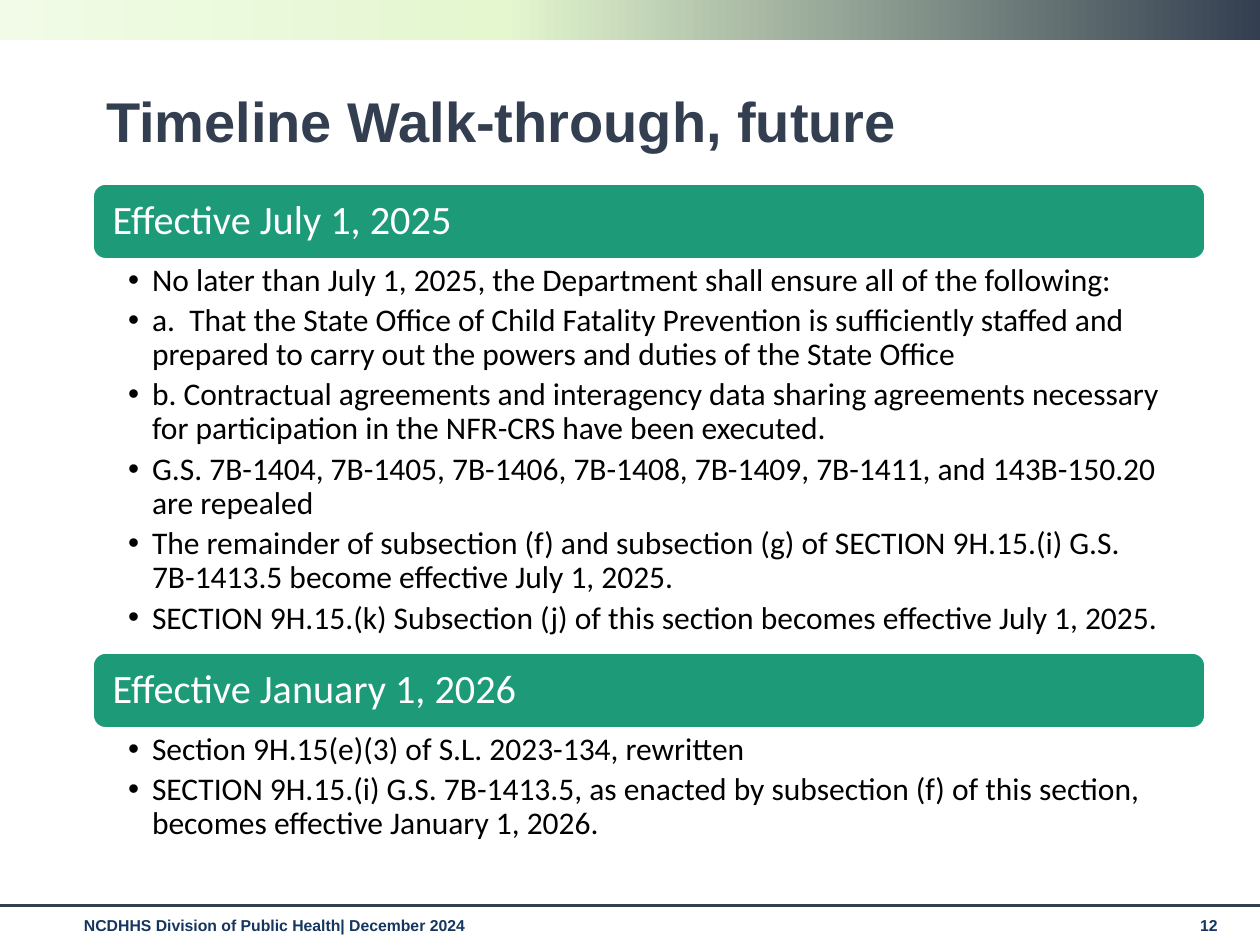
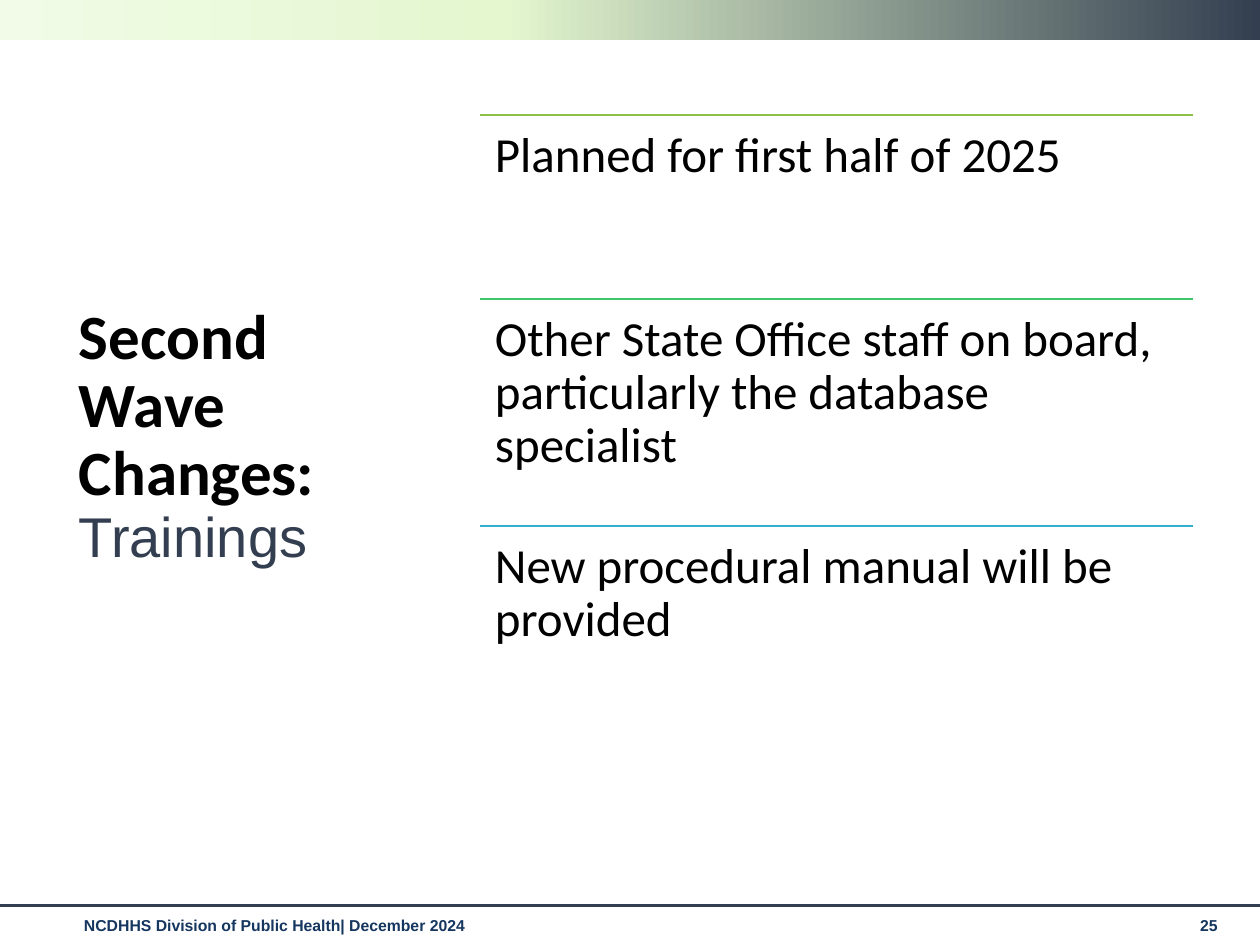
from copy import deepcopy

from pptx import Presentation
from pptx.dml.color import RGBColor
from pptx.enum.shapes import MSO_CONNECTOR, MSO_SHAPE
from pptx.enum.text import MSO_ANCHOR, MSO_AUTO_SIZE, PP_ALIGN
from pptx.oxml.ns import qn
from pptx.util import Inches, Pt

PX = Inches(1) / 126
SLIDE_WIDTH, SLIDE_HEIGHT = 1260, 945
COLORS = {
    "navy": "333F50", "mint": "E4F7CF", "pale": "F1FBE7", "footer": "15365E",
    "teal": "1D9A78", "lime": "8BC145", "green": "3EC76A", "blue": "36AFCE",
    "black": "000000", "white": "FFFFFF",
}
BAND_STOPS = [(0, "navy"), (0.6, "mint"), (1, "pale")]
FOOTER = "NCDHHS Division of Public Health| December 2024"

TIMELINE_TITLE = [("Timeline Walk-through, future", "Arial", 32, "navy", True)]
TIMELINE = [
    ("Effective July 1, 2025", 393, [
        "No later than July 1, 2025, the Department shall ensure all of the following:",
        "a.  That the State Office of Child Fatality Prevention is sufficiently staffed and prepared to carry out the powers and duties of the State Office",
        "b. Contractual agreements and interagency data sharing agreements necessary for participation in the NFR-CRS have been executed.",
        "G.S. 7B-1404, 7B-1405, 7B-1406, 7B-1408, 7B-1409, 7B-1411, and 143B-150.20 are repealed",
        "The remainder of subsection (f) and subsection (g) of SECTION 9H.15.(i) G.S. 7B-1413.5 become effective July 1, 2025.",
        "SECTION 9H.15.(k) Subsection (j) of this section becomes effective July 1, 2025.",
    ]),
    ("Effective January 1, 2026", 121, [
        "Section 9H.15(e)(3) of S.L. 2023-134, rewritten",
        "SECTION 9H.15.(i) G.S. 7B-1413.5, as enacted by subsection (f) of this section, becomes effective January 1, 2026.",
    ]),
]
TRAININGS_TITLE = [
    ("Second Wave Changes: ", "Calibri", 36, "black", True),
    ("Trainings", "Arial", 32, "navy", False),
]
TRAININGS = [
    ("Planned for first half of 2025", "lime", 184),
    ("Other State Office staff on board, particularly the database specialist", "green", 227),
    ("New procedural manual will be provided", "blue", 325),
]


def px(length):
    return round(length * PX)


def rgb(name):
    return RGBColor.from_string(COLORS[name])


def set_font(font, name, size, color, bold=False):
    font.name, font.size, font.bold = name, Pt(size), bold
    font.color.rgb = rgb(color)


def place(shape, left, top, width, height):
    shape.left, shape.top, shape.width, shape.height = map(px, (left, top, width, height))


def set_frame(frame, insets, anchor):
    frame.word_wrap = True
    frame.auto_size = MSO_AUTO_SIZE.NONE
    frame.vertical_anchor = anchor
    frame.margin_left, frame.margin_top, frame.margin_right, frame.margin_bottom = map(px, insets)


def write(shape, lines, font, insets, anchor=MSO_ANCHOR.TOP, spacing=0.9, after=0, hanging=0):
    frame = shape.text_frame
    set_frame(frame, insets, anchor)
    for index, line in enumerate(lines):
        para = frame.add_paragraph() if index else frame.paragraphs[0]
        para.text = line
        para.alignment = PP_ALIGN.LEFT
        para.line_spacing = spacing
        para.space_before, para.space_after = Pt(0), Pt(after)
        if hanging:
            properties = para._p.get_or_add_pPr()
            properties.set("marL", str(px(hanging)))
            properties.set("indent", str(-px(hanging)))
        set_font(para.font, *font)


def add_text(page, box, lines, font, insets, **options):
    write(page.shapes.add_textbox(*map(px, box)), lines, font, insets, **options)


def add_rule(page, left, right, y, color, weight):
    rule = page.shapes.add_connector(MSO_CONNECTOR.STRAIGHT, px(left), px(y), px(right), px(y))
    rule.line.color.rgb = rgb(color)
    rule.line.width = Pt(weight)
    properties = rule._element.spPr
    properties.append(properties.makeelement(qn("a:effectLst"), {}))


def add_block(page, kind, left, top, width, height):
    block = page.shapes.add_shape(kind, *map(px, (left, top, width, height)))
    block.shadow.inherit = False
    return block


def add_page(deck, layout, number, title, title_box, bottom_inset=6):
    page = deck.slides.add_slide(deck.slide_layouts.get_by_name(layout))
    band = add_block(page, MSO_SHAPE.RECTANGLE, 0, 0, SLIDE_WIDTH, 40)
    band.line.fill.background()
    band.fill.gradient()
    band.fill.gradient_angle = 180
    stops = band._element.spPr.find(".//" + qn("a:gsLst"))
    stops.append(deepcopy(stops[0]))
    for stop, (position, color) in zip(band.fill.gradient_stops, BAND_STOPS):
        stop.position = position
        stop.color.rgb = rgb(color)
    add_rule(page, 0, SLIDE_WIDTH, 906, "navy", 1.75)
    for left, width, text in [(72, 1101, FOOTER), (1188, 55, str(number))]:
        add_text(page, (left, 910, width, 35), [text], ("Arial", 9, "footer", True),
                 (12, 6, 12, 6), spacing=1)

    place(page.shapes.title, *title_box)
    frame = page.shapes.title.text_frame
    set_frame(frame, (13, 6, 13, bottom_inset), MSO_ANCHOR.MIDDLE)
    para = frame.paragraphs[0]
    para.alignment = PP_ALIGN.LEFT
    para.line_spacing = 0.9
    for text, *font in title:
        span = para.add_run()
        span.text = text
        set_font(span.font, *font)
    return page


def build_timeline(deck):
    page = add_page(deck, "Two Content", 12, TIMELINE_TITLE, (93, 86, 1081, 76))
    left, top, width, header_height = 93, 184, 1112, 75
    bodies = list(page.placeholders)[1:]
    for body, (heading, list_height, items) in zip(bodies, TIMELINE):
        header = add_block(page, MSO_SHAPE.ROUNDED_RECTANGLE, left, top, width, header_height)
        header.fill.solid()
        header.fill.fore_color.rgb = rgb("teal")
        header.line.color.rgb = rgb("white")
        header.line.width = Pt(1)
        write(header, [heading], ("Calibri", 23, "white"), (16, 13, 16, 13), MSO_ANCHOR.MIDDLE)
        top += header_height + 1
        place(body, left, top, width, list_height)
        write(body, items, ("Calibri", 18, "black"), (35, 4, 23, 4), after=3.6, hanging=24)
        top += list_height


def build_trainings(deck):
    page = add_page(deck, "Title Only", 25, TRAININGS_TITLE, (66, 88, 353, 770), 77)
    left, top, width = 480, 115, 713
    for text, color, height in TRAININGS:
        add_rule(page, left, left + width, top, color, 1)
        add_text(page, (left, top, width, height), [text], ("Calibri", 28, "black"), (15, 15, 15, 15))
        top += height


def main():
    deck = Presentation()
    deck.slide_width, deck.slide_height = px(SLIDE_WIDTH), px(SLIDE_HEIGHT)
    build_timeline(deck)
    build_trainings(deck)
    deck.save("out.pptx")


if __name__ == "__main__":
    main()
